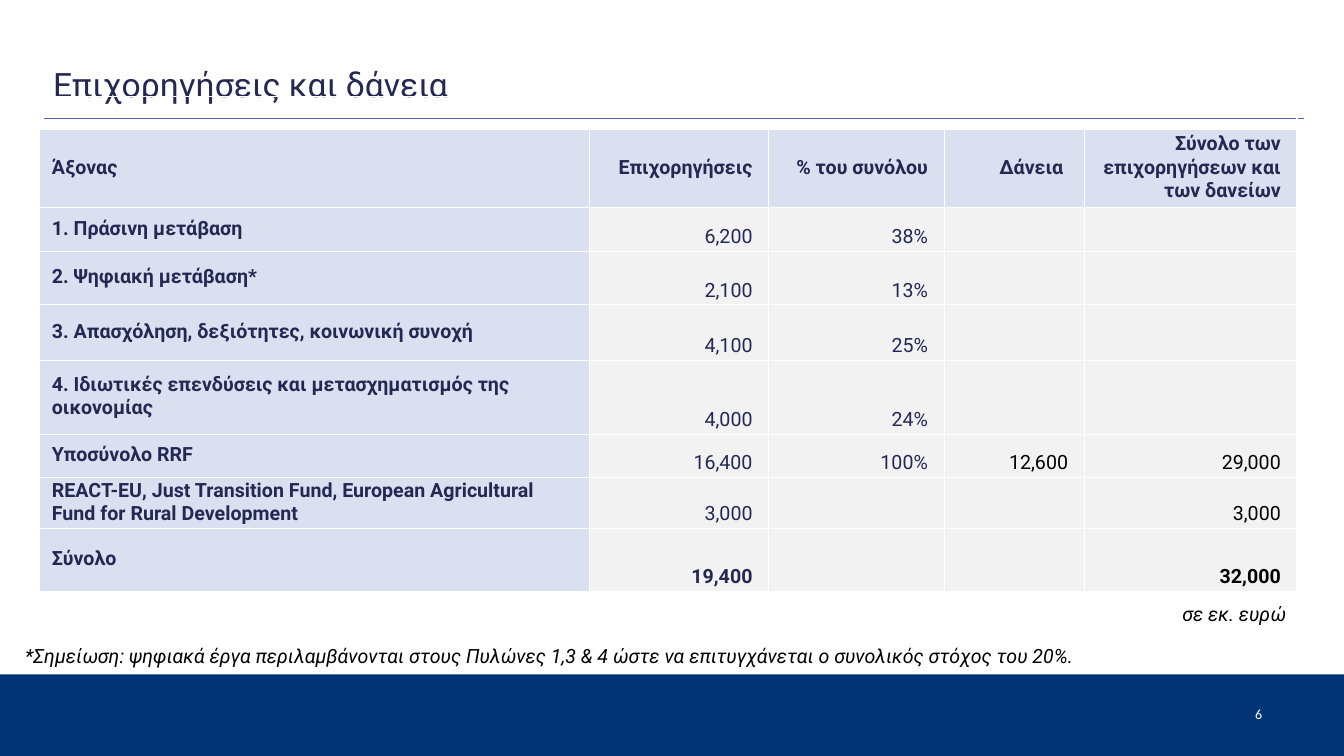
import pptx
import pptx.dml.color
import pptx.enum.shapes
import pptx.enum.text
import pptx.oxml
import pptx.oxml.ns
import pptx.util

ANCHOR = pptx.enum.text.MSO_ANCHOR
ALIGN = pptx.enum.text.PP_ALIGN
COLORS = {
    "navy": "242852", "band": "013476", "rule": "4A66AC", "label": "DAE0EF",
    "value": "F2F2F2", "white": "FFFFFF", "black": "000000",
}
SLIDE_WIDTH = pptx.util.Inches(13.33)
SLIDE_HEIGHT = pptx.util.Inches(7.5)

# Shares of the slide's width and height, in percent
COLUMN_SHARES = [40.89, 13.35, 13.05, 10.43, 15.83]
SPACER_SHARE = 4.4
ROW_SHARES = [10.27, 5.87, 7.07, 7.4, 9.73, 5.73, 6.53, 8.27]
FUNDING = [
    ["Άξονας", "Επιχορηγήσεις", "% του συνόλου", "Δάνεια ",
     "Σύνολο των επιχορηγήσεων και των δανείων"],
    ["1. Πράσινη μετάβαση ", "6,200", "38%", "", ""],
    ["2. Ψηφιακή μετάβαση*", "2,100", "13%", "", ""],
    ["3. Απασχόληση, δεξιότητες, κοινωνική συνοχή", "4,100", "25%", "", ""],
    ["4. Ιδιωτικές επενδύσεις και μετασχηματισμός της οικονομίας",
     "4,000", "24%", "", ""],
    ["Υποσύνολο RRF", "16,400", "100%", "12,600", "29,000"],
    ["REACT-EU, Just Transition Fund, European Agricultural Fund for Rural Development",
     "3,000", "", "", "3,000"],
    ["Σύνολο", "19,400", "", "", "32,000"],
]


def across(share):
    return round(SLIDE_WIDTH * share / 100)


def down(share):
    return round(SLIDE_HEIGHT * share / 100)


def area(left, top, width, height):
    """Turn percent shares of the slide into lengths."""
    return across(left), down(top), across(width), down(height)


def rgb(name):
    return pptx.dml.color.RGBColor.from_string(COLORS[name])


def write_text(frame, text, size=14, font="Roboto", color="black", bold=False,
               italic=False, align=ALIGN.LEFT):
    para = frame.paragraphs[0]
    para.alignment = align
    span = para.add_run()
    span.text = text
    span.font.size = pptx.util.Pt(size)
    span.font.name = font
    span.font.color.rgb = rgb(color)
    span.font.bold = bold
    span.font.italic = italic


def set_margins(target, left, top, right, bottom):
    """Set the inner margins, in inches, of a text frame or a cell."""
    target.margin_left = pptx.util.Inches(left)
    target.margin_top = pptx.util.Inches(top)
    target.margin_right = pptx.util.Inches(right)
    target.margin_bottom = pptx.util.Inches(bottom)


def add_text(page, bounds, text, margin=None, anchor=ANCHOR.TOP, **text_format):
    frame = page.shapes.add_textbox(*bounds).text_frame
    frame.word_wrap = True
    frame.vertical_anchor = anchor
    if margin is not None:
        set_margins(frame, margin, margin, margin, margin)
    write_text(frame, text, **text_format)


def add_title(page, bounds, text):
    title = page.shapes.title
    title.left, title.top, title.width, title.height = bounds
    frame = title.text_frame
    frame.word_wrap = True
    frame.auto_size = pptx.enum.text.MSO_AUTO_SIZE.NONE
    frame.vertical_anchor = ANCHOR.TOP
    set_margins(frame, 0.1, 0.1, 0.1, 0.1)
    write_text(frame, text, size=24, color="navy")


def add_band(page, bounds):
    band = page.shapes.add_shape(pptx.enum.shapes.MSO_SHAPE.RECTANGLE, *bounds)
    band.shadow.inherit = False
    band.fill.solid()
    band.fill.fore_color.rgb = rgb("band")
    band.line.fill.background()


def add_rule(page, left, right, top):
    rule = page.shapes.add_connector(
        pptx.enum.shapes.MSO_CONNECTOR.STRAIGHT,
        across(left), down(top), across(right), down(top))
    rule.line.color.rgb = rgb("rule")
    rule.line.width = pptx.util.Pt(1)
    properties = rule._element.spPr
    properties.append(pptx.oxml.parse_xml(
        f"<a:effectLst {pptx.oxml.ns.nsdecls('a')}/>"))


def set_borders(cell):
    """Draw a thin white line on all four sides; call before filling the cell."""
    properties = cell._tc.get_or_add_tcPr()
    for side in ("lnL", "lnR", "lnT", "lnB"):
        properties.append(pptx.oxml.parse_xml(
            f"<a:{side} {pptx.oxml.ns.nsdecls('a')} w='12700'><a:solidFill>"
            f"<a:srgbClr val='{COLORS['white']}'/></a:solidFill></a:{side}>"))


def format_cell(cell, text, row, column):
    is_header, is_label = row == 0, column == 0
    is_total = row == len(FUNDING) - 1
    set_borders(cell)
    cell.fill.solid()
    cell.fill.fore_color.rgb = rgb("label" if is_header or is_label else "value")
    cell.vertical_anchor = ANCHOR.MIDDLE if is_header or is_label else ANCHOR.BOTTOM
    set_margins(cell, 0.12, 0.02 if column == 1 else 0.01, 0.16, 0.03)
    if text:
        write_text(cell.text_frame, text,
                   color="navy" if is_header or column < 3 else "black",
                   bold=is_header or is_label or is_total,
                   align=ALIGN.LEFT if is_label else ALIGN.RIGHT)


def add_spacer_row(table):
    """Merge the first row into one clear cell above the headings."""
    for cell in table.rows[0].cells:
        set_borders(cell)
        cell.fill.background()
        set_margins(cell, 0, 0, 0, 0)
    table.cell(0, 0).merge(table.cell(0, len(COLUMN_SHARES) - 1))


def add_funding_table(page, left, top):
    heights = [SPACER_SHARE] + ROW_SHARES
    bounds = area(left, top, sum(COLUMN_SHARES), sum(heights))
    table = page.shapes.add_table(len(heights), len(COLUMN_SHARES), *bounds).table
    table.first_row = False
    table.horz_banding = False
    for column, share in zip(table.columns, COLUMN_SHARES):
        column.width = across(share)
    for row, share in zip(table.rows, heights):
        row.height = down(share)
    add_spacer_row(table)
    for row, texts in enumerate(FUNDING):
        for column, text in enumerate(texts):
            format_cell(table.cell(row + 1, column), text, row, column)


def main():
    deck = pptx.Presentation()
    deck.slide_width, deck.slide_height = SLIDE_WIDTH, SLIDE_HEIGHT
    page = deck.slides.add_slide(deck.slide_layouts.get_by_name("Title Only"))
    add_band(page, area(0, 89.2, 100, 10.8))
    add_rule(page, 3.3, 97, 15.65)
    add_text(page, area(92.65, 90.67, 4.28, 7.6), "6", margin=0.1,
             anchor=ANCHOR.MIDDLE, size=10, font="Calibri", color="white")
    add_funding_table(page, 2.96, 12.73)
    add_title(page, area(3.2, 7.13, 96.8, 11.2), "Επιχορηγήσεις και δάνεια")
    add_text(page, area(86.9, 78.93, 9.53, 4.53), "σε εκ. ευρώ ",
             italic=True, align=ALIGN.RIGHT)
    add_text(page, area(0, 84.53, 80.67, 4.53),
             "*Σημείωση: ψηφιακά έργα περιλαμβάνονται στους Πυλώνες 1,3 & 4 "
             "ώστε να επιτυγχάνεται ο συνολικός στόχος του 20%.",
             italic=True, align=ALIGN.RIGHT)
    deck.save("out.pptx")


if __name__ == "__main__":
    main()
